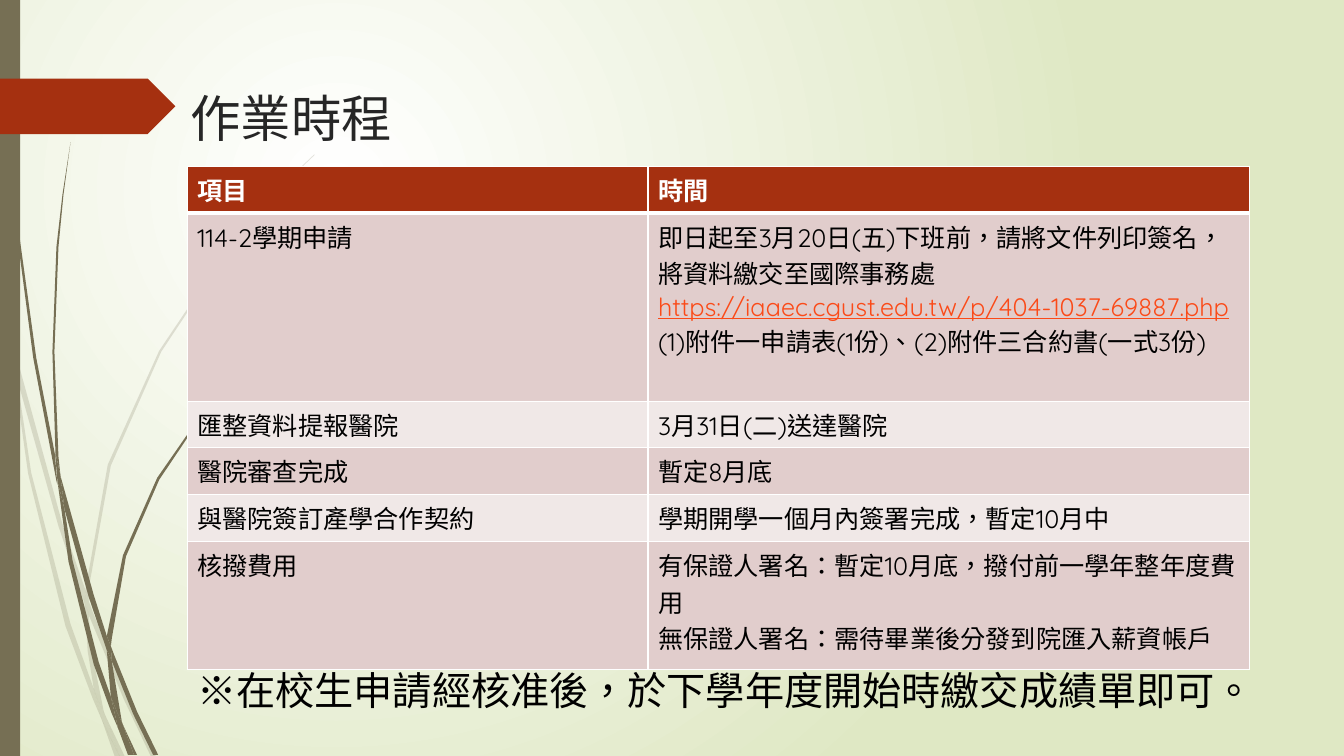
import pptx
import pptx.dml.color
import pptx.enum.shapes
import pptx.enum.text
import pptx.oxml
import pptx.oxml.ns
import pptx.util
from pptx.util import Cm

COLOURS = {
    "white": "FFFFFF", "pale_green": "DFE8C4", "olive": "766F54", "rust": "A53010",
    "title": "262626", "black": "000000", "link": "FB4A18",
    "band_dark": "E1CDCC", "band_light": "F0E8E7",
}
LATIN_FONT = "Quicksand"
CHINESE_FONT = "Noto Sans CJK SC"
LINK = "https://iaaec.cgust.edu.tw/p/404-1037-69887.php"
SCHEDULE = [
    ("項目", ["時間"]),
    ("114-2學期申請", ["即日起至3月20日(五)下班前，請將文件列印簽名，將資料繳交至國際事務處", LINK,
                   "(1)附件一申請表(1份)、(2)附件三合約書(一式3份)"]),
    ("匯整資料提報醫院", ["3月31日(二)送達醫院"]),
    ("醫院審查完成", ["暫定8月底"]),
    ("與醫院簽訂產學合作契約", ["學期開學一個月內簽署完成，暫定10月中"]),
    ("核撥費用", ["有保證人署名：暫定10月底，撥付前一學年整年度費用",
              "無保證人署名：需待畢業後分發到院匯入薪資帳戶"]),
]
ROW_HEIGHTS = [1.18, 4.74, 1.17, 1.18, 1.18, 3.24]
COLUMN_WIDTHS = [11.61, 15.16]
GRASS_UNIT = Cm(0.0254)
FAINT_GRASS = [
    [(11, 350), (9, 322), (0, 282), (0, 299), (10, 344)],
    [(58, 522), (84, 599), (85, 586), (62, 520), (14, 345), (17, 376)],
    [(92, 607), (88, 596), (88, 610), (123, 694), (150, 751), (155, 751), (127, 692)],
    [(119, 751), (124, 751), (105, 711)],
    [(93, 683), (70, 619), (31, 469), (17, 376), (11, 350), (28, 470), (65, 621), (92, 693),
     (101, 714), (99, 707)],
    [(84, 599), (87, 646), (93, 683), (96, 692), (105, 711), (103, 706), (91, 646),
     (88, 610), (88, 608)],
    [(88, 584), (110, 462), (160, 349), (229, 245), (268, 198), (290, 175), (312, 154),
     (312, 153), (289, 175), (268, 197), (228, 244), (158, 348), (107, 461), (85, 584),
     (85, 586), (88, 596)],
    [(101, 714), (114, 751), (119, 751)],
    [(88, 608), (88, 610), (88, 596), (85, 586), (84, 599)],
    [(96, 692), (93, 683), (99, 707), (101, 714), (119, 751), (105, 711)],
]
DARK_GRASS = [
    [(7, 110), (17, 233), (33, 355), (56, 477), (57, 481), (55, 457), (55, 453), (36, 355),
     (19, 232), (8, 109), (5, 48), (4, 0), (3, 0), (4, 48)],
    [(88, 592), (106, 645), (106, 633), (106, 631), (93, 590), (60, 472), (64, 505)],
    [(113, 649), (110, 641), (111, 656), (132, 708), (152, 749), (157, 749), (136, 706)],
    [(110, 691), (98, 657), (72, 556), (64, 505), (57, 477), (68, 557), (93, 659),
     (111, 708), (117, 722), (116, 717)],
    [(60, 472), (58, 453), (54, 349), (58, 245), (63, 193), (70, 141), (62, 193), (56, 245),
     (52, 349), (55, 449)],
    [(133, 749), (136, 749), (122, 719)],
    [(57, 477), (64, 505), (60, 472), (55, 449), (55, 453)],
    [(111, 633), (125, 552), (158, 476), (205, 406), (231, 374), (245, 359), (261, 344),
     (260, 344), (245, 358), (231, 373), (204, 405), (156, 474), (122, 551), (106, 631),
     (110, 641)],
    [(117, 722), (127, 749), (131, 749)],
    [(106, 645), (110, 691), (116, 706), (122, 719), (121, 716), (111, 656), (109, 651)],
    [(106, 645), (109, 651), (111, 656), (110, 641), (106, 631), (106, 633)],
    [(116, 706), (110, 691), (116, 717), (117, 722), (130, 749), (133, 749), (122, 719)],
]


def rgb(name):
    """Return the named colour."""
    return pptx.dml.color.RGBColor.from_string(COLOURS[name])


def drawing_element(markup):
    """Parse one DrawingML element."""
    namespace = pptx.oxml.ns.nsdecls("a")
    return pptx.oxml.parse_xml(markup.replace(" ", f" {namespace} ", 1))


def write_text(paragraph, text, size=18, colour="black", bold=False, underline=False,
               latin=LATIN_FONT):
    """Write one formatted run of Traditional Chinese into a paragraph."""
    run = paragraph.add_run()
    run.text = text
    run.font.name = latin
    run.font.size = pptx.util.Pt(size)
    run.font.bold = bold
    run.font.underline = underline
    run.font.color.rgb = rgb(colour)
    run.font._element.set("lang", "zh-TW")
    latin_element = run.font._element.find(pptx.oxml.ns.qn("a:latin"))
    latin_element.addnext(drawing_element(f'<a:ea typeface="{CHINESE_FONT}"/>'))


def paint(shape, colour, opacity=100):
    """Give a shape a plain fill without line or shadow."""
    shape.shadow.inherit = False
    shape.line.fill.background()
    shape.fill.solid()
    shape.fill.fore_color.rgb = rgb(colour)
    if opacity < 100:
        colour_element = shape._element.spPr.find(".//" + pptx.oxml.ns.qn("a:srgbClr"))
        colour_element.append(drawing_element(f'<a:alpha val="{opacity * 1000}"/>'))


def add_background(slide):
    """Fill the background with a radial gradient."""
    slide.background.fill.gradient()
    properties = slide.background._cSld.bg.bgPr
    gradient = drawing_element(
        '<a:gradFill rotWithShape="1"><a:gsLst>'
        f'<a:gs pos="0"><a:srgbClr val="{COLOURS["white"]}"/></a:gs>'
        f'<a:gs pos="100000"><a:srgbClr val="{COLOURS["pale_green"]}"/></a:gs></a:gsLst>'
        '<a:path path="circle"><a:fillToRect l="50000" t="50000" r="100000" b="100000"/>'
        '</a:path></a:gradFill>')
    properties.replace(properties.find(pptx.oxml.ns.qn("a:gradFill")), gradient)


def add_grass(slide, pieces, opacity=100):
    """Draw the pieces of a tuft of grass."""
    for outline in pieces:
        builder = slide.shapes.build_freeform(*outline[0], scale=GRASS_UNIT)
        builder.add_line_segments(outline[1:], close=True)
        paint(builder.convert_to_shape(), "olive", opacity)


def add_block(slide, kind, left, top, width, height, colour):
    """Add a plain preset shape."""
    shape = slide.shapes.add_shape(kind, Cm(left), Cm(top), Cm(width), Cm(height))
    paint(shape, colour)


def add_label(slide, text, left, top, width, height, wrap=True, **text_format):
    """Add a one-paragraph text box."""
    frame = slide.shapes.add_textbox(Cm(left), Cm(top), Cm(width), Cm(height)).text_frame
    frame.word_wrap = wrap
    frame.vertical_anchor = pptx.enum.text.MSO_ANCHOR.BOTTOM
    write_text(frame.paragraphs[0], text, **text_format)


def set_borders(cell, top, bottom):
    """Draw white cell borders with widths in points."""
    properties = cell._tc.get_or_add_tcPr()
    widths = {"lnL": 1, "lnR": 1, "lnT": top, "lnB": bottom}
    for index, (side, width) in enumerate(widths.items()):
        properties.insert(index, drawing_element(
            f'<a:{side} w="{pptx.util.Pt(width)}"><a:solidFill>'
            f'<a:srgbClr val="{COLOURS["white"]}"/></a:solidFill></a:{side}>'))


def fill_cell(cell, lines, row):
    """Fill and format one schedule cell."""
    header = row == 0
    cell.fill.solid()
    cell.fill.fore_color.rgb = rgb("rust" if header else "band_dark" if row % 2 else "band_light")
    set_borders(cell, top=3 if row == 1 else 1, bottom=3 if header else 1)
    frame = cell.text_frame
    for index, line in enumerate(lines):
        paragraph = frame.add_paragraph() if index else frame.paragraphs[0]
        is_link = line == LINK
        colour = "white" if header else "link" if is_link else "black"
        write_text(paragraph, line, colour=colour, bold=header, underline=is_link)


def add_schedule(slide, left, top):
    """Add the schedule table."""
    table = slide.shapes.add_table(
        len(SCHEDULE), len(COLUMN_WIDTHS), Cm(left), Cm(top),
        Cm(sum(COLUMN_WIDTHS)), Cm(sum(ROW_HEIGHTS))).table
    for column, width in zip(table.columns, COLUMN_WIDTHS):
        column.width = Cm(width)
    for row, (item, times) in enumerate(SCHEDULE):
        table.rows[row].height = Cm(ROW_HEIGHTS[row])
        fill_cell(table.cell(row, 0), [item], row)
        fill_cell(table.cell(row, 1), times, row)


def main():
    """Build and save the schedule slide."""
    presentation = pptx.Presentation()
    presentation.slide_width, presentation.slide_height = Cm(33.87), Cm(19.05)
    slide = presentation.slides.add_slide(presentation.slide_layouts[6])
    shapes = pptx.enum.shapes.MSO_SHAPE
    add_background(slide)
    add_grass(slide, FAINT_GRASS, opacity=20)
    add_grass(slide, DARK_GRASS)
    add_block(slide, shapes.RECTANGLE, 0, 0, 0.51, 19.05, "olive")
    add_block(slide, shapes.PENTAGON, 0, 1.98, 4.42, 1.4, "rust")
    add_label(slide, "作業時程", 4.55, 1.96, 24.77, 1.88, size=36, colour="title")
    add_schedule(slide, 4.72, 4.19)
    add_label(slide, "※在校生申請經核准後，於下學年度開始時繳交成績單即可。",
              4.72, 16.64, 27.43, 1.45, wrap=False, size=28, latin=CHINESE_FONT)
    presentation.save("out.pptx")


if __name__ == "__main__":
    main()
